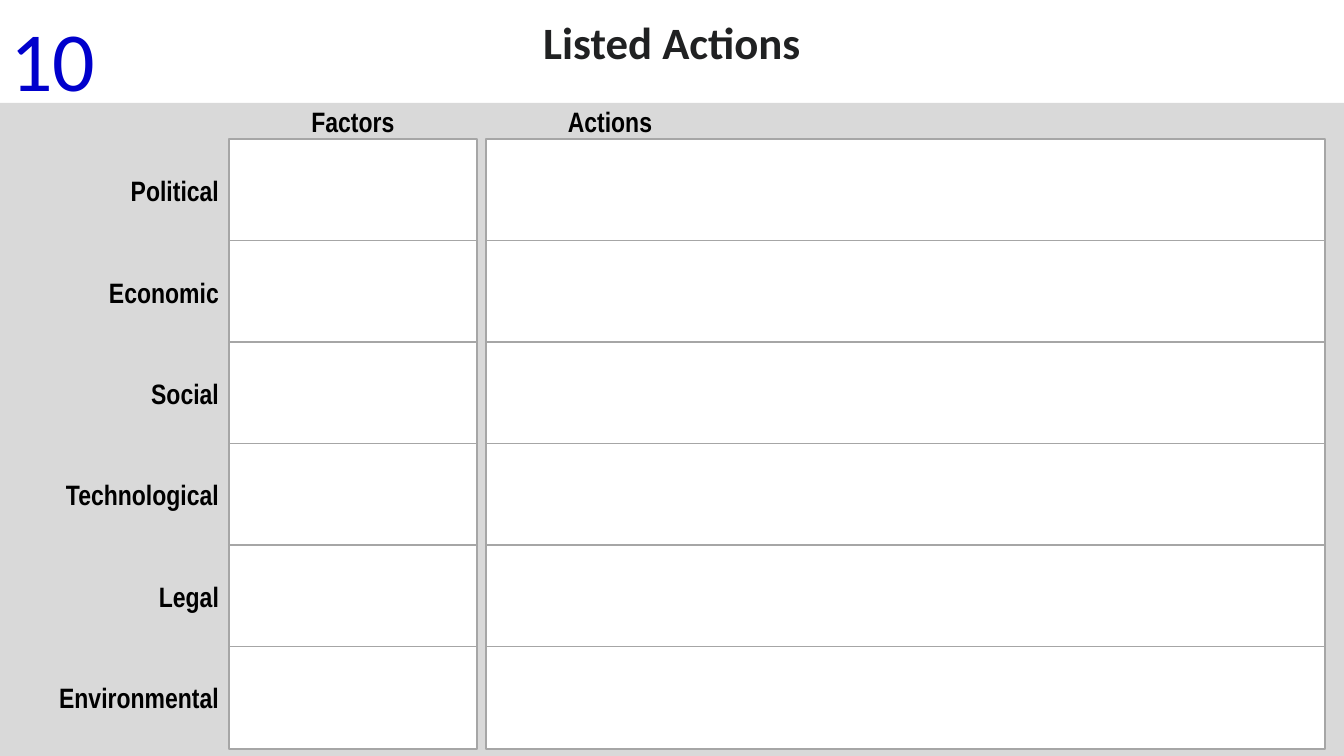
from pptx import Presentation
from pptx.dml.color import RGBColor
from pptx.enum import shapes, text
from pptx.util import Inches, Pt

WHITE = RGBColor(0xFF, 0xFF, 0xFF)
BLACK = RGBColor(0x00, 0x00, 0x00)
TITLE_INK = RGBColor(0x20, 0x21, 0x22)
NUMBER_BLUE = RGBColor(0x00, 0x00, 0xCC)
PANEL_GREY = RGBColor(0xD9, 0xD9, 0xD9)
BORDER_GREY = RGBColor(0xA6, 0xA6, 0xA6)

SLIDE_W, SLIDE_H = 13.33, 7.5
HEADER_H = 1.02
LABEL_H = 0.44
FACTOR_W, ACTION_W = 2.46, 8.32
COLUMN_GAP = 0.09
ROW_OVERLAP = 0.01
FACTORS = ["Political", "Economic", "Social", "Technological", "Legal", "Environmental"]
CENTER, RIGHT = text.PP_ALIGN.CENTER, text.PP_ALIGN.RIGHT
TOP, MIDDLE = text.MSO_ANCHOR.TOP, text.MSO_ANCHOR.MIDDLE


def write(sp, words, size, font, color, bold=False, align=CENTER, anchor=TOP, wrap=True):
    tf = sp.text_frame
    tf.text = words
    tf.word_wrap = wrap
    tf.auto_size = text.MSO_AUTO_SIZE.SHAPE_TO_FIT_TEXT
    tf.vertical_anchor = anchor
    p = tf.paragraphs[0]
    p.alignment = align
    f = p.runs[0].font
    f.size, f.name, f.bold = Pt(size), font, bold
    f.color.rgb = color


def add_label(parent, words, x, y, w, align=CENTER):
    sp = parent.add_textbox(Inches(x), Inches(y), Inches(w), Inches(LABEL_H))
    write(sp, words, 20, "Arial Narrow", BLACK, bold=True, align=align, anchor=MIDDLE)


def add_box(parent, kind, x, y, w, h, fill, border=None):
    sp = parent.add_shape(kind, Inches(x), Inches(y), Inches(w), Inches(h))
    sp.shadow.inherit = False
    sp.fill.solid()
    sp.fill.fore_color.rgb = fill
    if border is None:
        sp.line.fill.background()
    else:
        sp.line.color.rgb = border
        sp.line.width = Pt(1)
    return sp


def add_header(s, x, y, w):
    title = s.shapes.title
    margin = 0.45
    title.left, title.top = Inches(x + margin), Inches(y + 0.1)
    title.width, title.height = Inches(w - 2 * margin), Inches(0.64)
    write(title, "Listed Actions", 32, "Calibri", TITLE_INK, bold=True)
    number = s.shapes.add_textbox(Inches(x), Inches(y + 0.03), Inches(1.05), Inches(1.11))
    write(number, "10", 60, "Calibri", NUMBER_BLUE, wrap=False)


def add_factor_row(s, factor, x, y, label_w, h):
    row = s.shapes.add_group_shape().shapes
    factor_x = x + label_w
    action_x = factor_x + FACTOR_W + COLUMN_GAP
    for box_x, box_w in ((factor_x, FACTOR_W), (action_x, ACTION_W)):
        sp = add_box(row, shapes.MSO_SHAPE.ROUNDED_RECTANGLE,
                     box_x, y, box_w, h, WHITE, BORDER_GREY)
        sp.adjustments[0] = 0
    add_label(row, factor, x, y + (h - LABEL_H) / 2, label_w, RIGHT)


def add_action_grid(s, x, y, w, h):
    add_box(s.shapes, shapes.MSO_SHAPE.RECTANGLE, x, y, w, h, PANEL_GREY)
    label_x, label_w = x + 0.2, 2.07
    factor_x = label_x + label_w
    action_x = factor_x + FACTOR_W + COLUMN_GAP
    for heading, heading_x in (("Factors", factor_x), ("Actions", action_x)):
        add_label(s.shapes, heading, heading_x, y - 0.04, FACTOR_W)
    rows_y = y + 0.36
    pitch = (y + h - 0.08 - rows_y) / len(FACTORS)
    for i, factor in enumerate(FACTORS):
        add_factor_row(s, factor, label_x, rows_y + i * pitch, label_w, pitch + ROW_OVERLAP)


def main():
    prs = Presentation()
    prs.slide_width, prs.slide_height = Inches(SLIDE_W), Inches(SLIDE_H)
    s = prs.slides.add_slide(prs.slide_layouts[5])
    add_header(s, 0, 0, SLIDE_W)
    add_action_grid(s, 0, HEADER_H, SLIDE_W, SLIDE_H - HEADER_H)
    prs.save("out.pptx")


if __name__ == "__main__":
    main()
